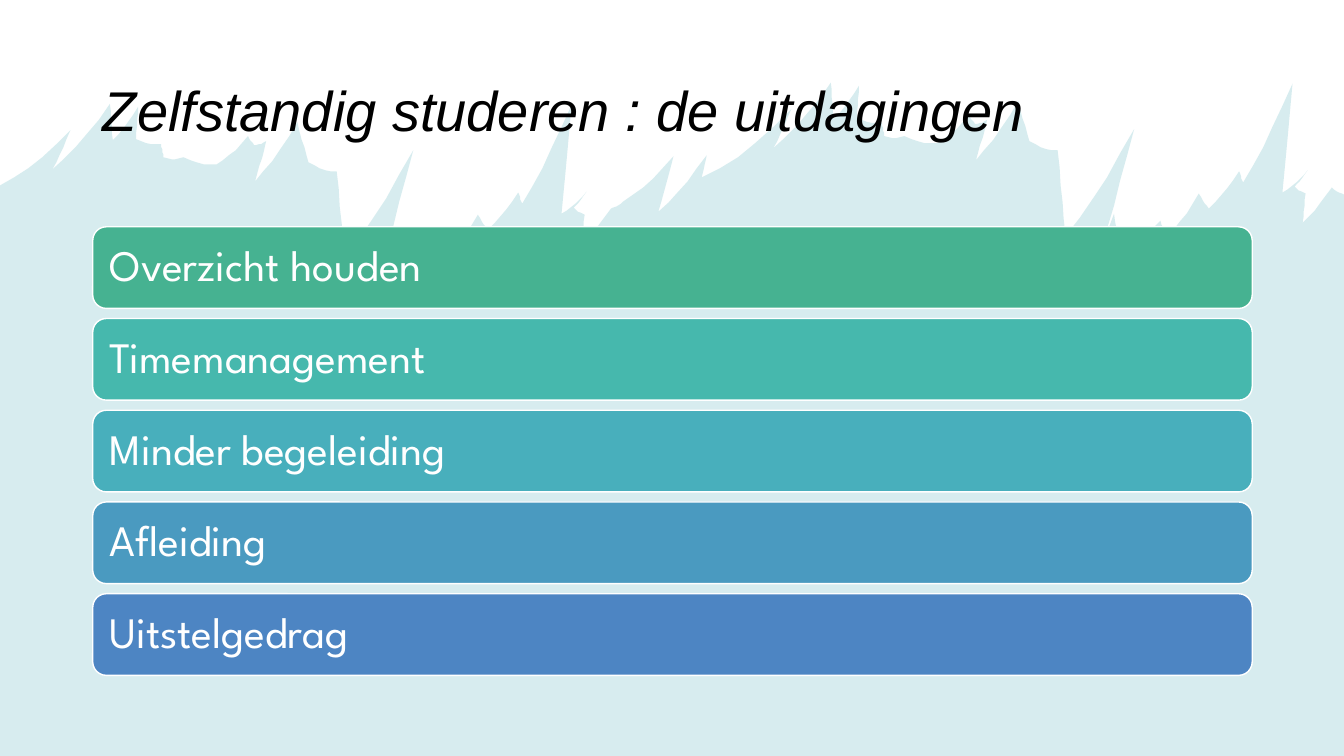
from dataclasses import dataclass
from math import pi, sin

from lxml.etree import SubElement
from pptx import Presentation
from pptx.dml.color import RGBColor
from pptx.enum.shapes import MSO_SHAPE as Shape
from pptx.enum.text import MSO_ANCHOR as Anchor, MSO_AUTO_SIZE as AutoSize, PP_ALIGN as Align
from pptx.oxml.ns import qn
from pptx.util import Inches, Pt

TITLE = "Zelfstandig studeren : de uitdagingen"
CHALLENGES = [
    ("Overzicht houden", "46B291"),
    ("Timemanagement", "46B8AD"),
    ("Minder begeleiding", "48AFBC"),
    ("Afleiding", "4A9AC0"),
    ("Uitstelgedrag", "4D85C3"),
]

WIDTH, HEIGHT = 13.33, 7.5
MARGIN, CONTENT_WIDTH = 0.92, 11.5
TITLE_TOP, TITLE_HEIGHT = 0.4, 1.45
BARS_TOP, BAR_PITCH, BAR_HEIGHT = 2.25, 0.91, 0.81
BAR_INSET = 0.13

BRUSH_STROKES = [
    {"tip": (0.70, 1.29), "notch": (0.52, 1.68)},
    {"tip": (1.09, 1.03), "notch": (1.12, 1.39)},
    {"tip": (1.37, 1.06), "notch": (1.35, 1.38)},
    {"tip": (1.60, 1.43), "notch": (1.62, 1.56)},
    {"tip": (1.82, 1.56), "notch": (2.15, 1.63)},
    {"tip": (2.46, 1.35), "notch": (2.52, 1.44)},
    {"tip": (2.64, 1.40), "notch": (2.53, 1.80)},
    {"tip": (2.95, 1.21), "notch": (3.06, 1.61)},
    {"tip": (3.34, 1.70), "notch": (3.42, 2.55)},
    {"tip": (4.10, 1.49), "notch": (3.76, 2.71)},
    {"tip": (3.90, 2.33), "notch": (3.97, 2.73)},
    {"tip": (4.36, 2.40), "notch": (4.43, 2.56)},
    {"tip": (4.74, 2.13), "notch": (4.84, 2.28)},
    {"tip": (5.14, 1.91), "notch": (5.18, 2.02)},
    {"tip": (5.67, 1.04), "notch": (5.57, 2.12)},
    {"tip": (5.82, 1.90), "notch": (5.69, 2.06)},
    {"tip": (5.80, 2.13), "notch": (5.77, 2.42)},
    {"tip": (6.06, 2.07), "notch": (6.18, 2.00)},
    {"tip": (6.68, 1.55), "notch": (6.53, 2.10)},
    {"tip": (7.01, 1.54), "notch": (6.96, 1.76)},
]
EDGE_LEFT, EDGE_RIGHT = (0, 1.84), (WIDTH, 1.93)
STROKE_REPEATS = 2
REPEAT_SHIFT = (7.15, -0.21)
FLANK_STEPS = 5
FLANK_SAG = 0.08
UNITS_PER_INCH = 100


@dataclass(frozen=True)
class Theme:
    ink: str = "000000"
    paper: str = "FFFFFF"
    wash: str = "3BA4B1"
    wash_opacity: int = 20
    title_font: str = "Arial"
    bar_font: str = "League Spartan"
    title_size: int = 40
    bar_size: int = 31
    line_width: int = 1


THEME = Theme()


def write_text(shape, text, *, font, size, color, italic=False, inset=None):
    frame = shape.text_frame
    frame.auto_size = AutoSize.NONE
    frame.word_wrap = True
    frame.vertical_anchor = Anchor.MIDDLE
    if inset is not None:
        frame.margin_left = frame.margin_right = Inches(inset)
        frame.margin_top = frame.margin_bottom = Inches(inset)
    paragraph = frame.paragraphs[0]
    paragraph.alignment = Align.LEFT
    paragraph.line_spacing = 0.9
    run = paragraph.add_run()
    run.text = text
    run.font.name = font
    run.font.size = Pt(size)
    run.font.italic = italic
    run.font.color.rgb = RGBColor.from_string(color)


def paint(shape, color):
    shape.shadow.inherit = False
    shape.fill.solid()
    shape.fill.fore_color.rgb = RGBColor.from_string(color)


def curved_flank(start, end):
    (start_x, start_y), (end_x, end_y) = start, end
    sag = FLANK_SAG * abs(end_x - start_x)
    for step in range(1, FLANK_STEPS + 1):
        share = step / FLANK_STEPS
        yield (start_x + share * (end_x - start_x),
               start_y + share * (end_y - start_y) + sag * sin(pi * share))


def torn_edge():
    shift_x, shift_y = REPEAT_SHIFT
    corners = [EDGE_LEFT]
    for repeat in range(STROKE_REPEATS):
        for stroke in BRUSH_STROKES:
            for x, y in (stroke["tip"], stroke["notch"]):
                corner = (x + repeat * shift_x, y + repeat * shift_y)
                if corner[0] < WIDTH:
                    corners.append(corner)
    corners.append(EDGE_RIGHT)
    edge = [EDGE_LEFT]
    for start, end in zip(corners, corners[1:]):
        edge.extend(curved_flank(start, end))
    return edge


def add_torn_backdrop(slide):
    outline = torn_edge() + [(WIDTH, HEIGHT), (0, HEIGHT)]
    points = [(round(x * UNITS_PER_INCH), round(y * UNITS_PER_INCH)) for x, y in outline]
    builder = slide.shapes.build_freeform(*points[0], scale=Inches(1) / UNITS_PER_INCH)
    builder.add_line_segments(points[1:], close=True)
    backdrop = builder.convert_to_shape()
    paint(backdrop, THEME.wash)
    backdrop.line.fill.background()
    color = next(backdrop._element.spPr.iter(qn("a:srgbClr")))
    SubElement(color, qn("a:alpha")).set("val", str(THEME.wash_opacity * 1000))
    return backdrop


def add_title(slide):
    title = slide.shapes.title
    title.left, title.top = Inches(MARGIN), Inches(TITLE_TOP)
    title.width, title.height = Inches(CONTENT_WIDTH), Inches(TITLE_HEIGHT)
    write_text(title, TITLE, font=THEME.title_font, size=THEME.title_size,
               color=THEME.ink, italic=True)
    return title


def add_challenge_bars(slide):
    for row, (label, color) in enumerate(CHALLENGES):
        bar = slide.shapes.add_shape(
            Shape.ROUNDED_RECTANGLE, Inches(MARGIN), Inches(BARS_TOP + row * BAR_PITCH),
            Inches(CONTENT_WIDTH), Inches(BAR_HEIGHT))
        paint(bar, color)
        bar.line.color.rgb = RGBColor.from_string(THEME.paper)
        bar.line.width = Pt(THEME.line_width)
        write_text(bar, label, font=THEME.bar_font, size=THEME.bar_size,
                   color=THEME.paper, inset=BAR_INSET)


def main():
    presentation = Presentation()
    presentation.slide_width, presentation.slide_height = Inches(WIDTH), Inches(HEIGHT)
    slide = presentation.slides.add_slide(presentation.slide_layouts[5])
    slide.background.fill.solid()
    slide.background.fill.fore_color.rgb = RGBColor.from_string(THEME.paper)
    backdrop = add_torn_backdrop(slide)
    title = add_title(slide)
    backdrop._element.addnext(title._element)
    add_challenge_bars(slide)
    presentation.save("out.pptx")


if __name__ == "__main__":
    main()
